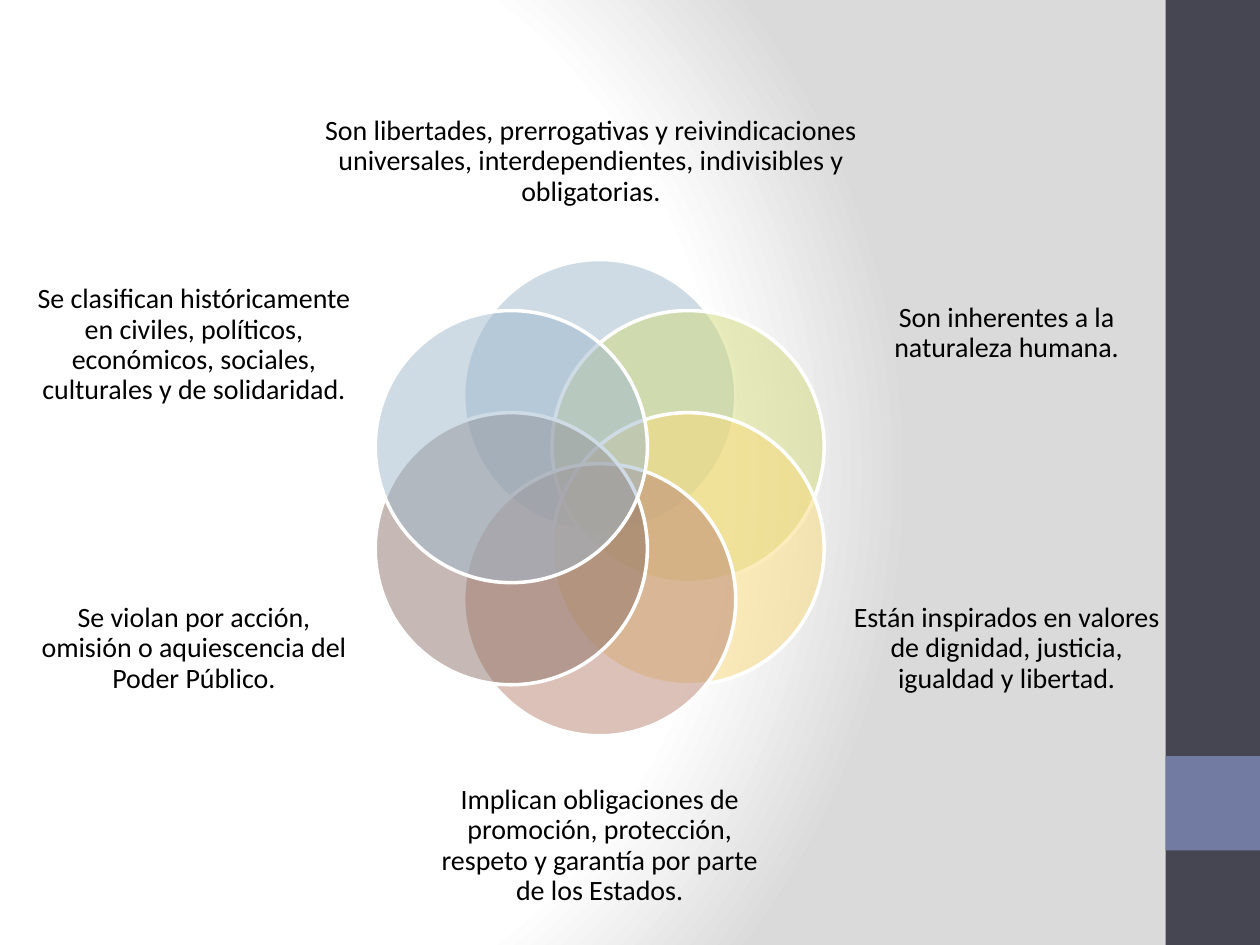
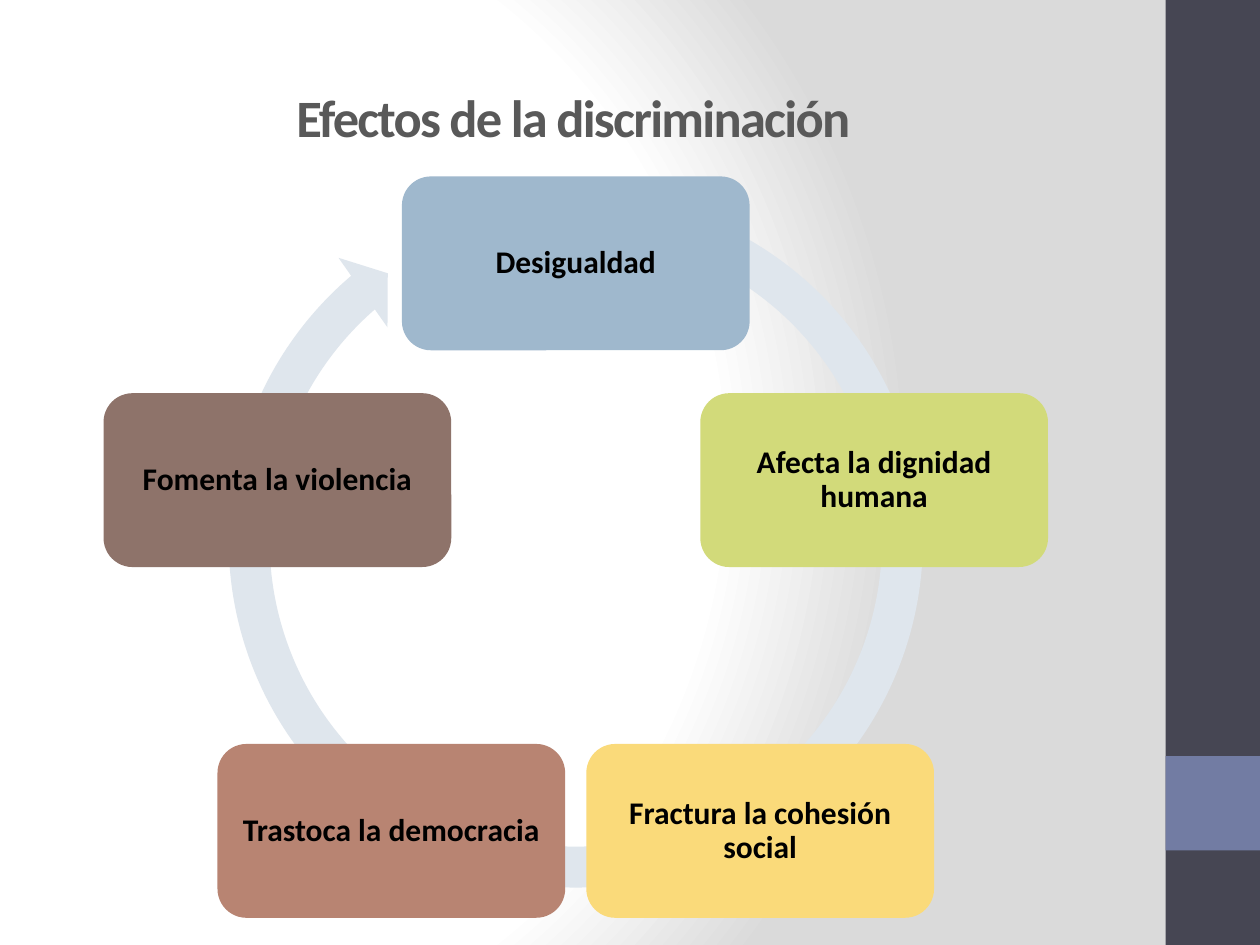
from dataclasses import dataclass
from math import cos, radians, sin

from lxml import etree
from pptx import Presentation
from pptx.dml.color import RGBColor
from pptx.enum.shapes import MSO_SHAPE
from pptx.enum.text import MSO_ANCHOR, PP_ALIGN
from pptx.oxml.ns import qn
from pptx.presentation import Presentation as Deck
from pptx.shapes.autoshape import Shape
from pptx.slide import Slide, SlideLayout
from pptx.util import Inches, Pt

RECTANGLE = MSO_SHAPE.RECTANGLE
ELLIPSE = MSO_SHAPE.OVAL
ROUNDED_RECTANGLE = MSO_SHAPE.ROUNDED_RECTANGLE
CIRCULAR_ARROW = MSO_SHAPE.CIRCULAR_ARROW
MIDDLE = MSO_ANCHOR.MIDDLE
CENTER = PP_ALIGN.CENTER


@dataclass(frozen=True)
class Theme:
    font: str = "Calibri"
    white: str = "FFFFFF"
    shade: str = "DADADA"
    band: str = "464653"
    band_accent: str = "727CA3"
    title: str = "595959"
    text: str = "000000"
    ring: str = "DFE6ED"
    blue: str = "9FB8CD"
    green: str = "D2DA7A"
    yellow: str = "FADA7A"
    clay: str = "B88472"
    brown: str = "8E736A"
    label_size: int = 16
    node_size: int = 18
    title_size: int = 30


THEME = Theme()


@dataclass(frozen=True)
class Box:
    left: float
    top: float
    width: float
    height: float

    def lengths(self) -> tuple[Inches, Inches, Inches, Inches]:
        return (Inches(self.left), Inches(self.top),
                Inches(self.width), Inches(self.height))


@dataclass(frozen=True)
class Orbit:
    center_x: float
    center_y: float
    radius: float
    count: int

    def box(self, index: int, width: float, height: float) -> Box:
        angle = radians(360 / self.count * index)
        x = self.center_x + self.radius * sin(angle)
        y = self.center_y - self.radius * cos(angle)
        return Box(x - width / 2, y - height / 2, width, height)


@dataclass(frozen=True)
class TextStyle:
    size: int
    color: str = THEME.text
    bold: bool = False
    line_spacing: float = 0.9
    inset: float = 0
    tracking: int = 0


@dataclass(frozen=True)
class Petal:
    color: str
    text: str
    label: Box


@dataclass(frozen=True)
class Effect:
    color: str
    text: str


LABEL_STYLE = TextStyle(THEME.label_size)
NODE_STYLE = TextStyle(THEME.node_size, bold=True, inset=0.07)
TITLE_STYLE = TextStyle(THEME.title_size, THEME.title, True, 1, 0.1, -100)

BANDS = (
    (Box(9.25, 0, 0.75, 7.5), THEME.band),
    (Box(9.25, 6, 0.75, 0.75), THEME.band_accent),
)

PETAL_SIZE = 2.16
PETAL_ORBIT = Orbit(4.76, 3.95, 0.81, 6)
PETALS = (
    Petal(THEME.blue,
          "Son libertades, prerrogativas y reivindicaciones universales, "
          "interdependientes, indivisibles y obligatorias.",
          Box(2.57, 0.55, 4.24, 1.47)),
    Petal(THEME.green, "Son inherentes a la naturaleza humana.",
          Box(6.71, 1.84, 2.56, 1.61)),
    Petal(THEME.yellow,
          "Están inspirados en valores de dignidad, justicia, "
          "igualdad y libertad.",
          Box(6.71, 4.25, 2.56, 1.8)),
    Petal(THEME.clay,
          "Implican obligaciones de promoción, protección, respeto y "
          "garantía por parte de los Estados.",
          Box(3.41, 5.98, 2.7, 1.47)),
    Petal(THEME.brown,
          "Se violan por acción, omisión o aquiescencia del Poder Público.",
          Box(0.26, 4.25, 2.56, 1.8)),
    Petal(THEME.blue,
          "Se clasifican históricamente en civiles, políticos, económicos, "
          "sociales, culturales y de solidaridad.",
          Box(0.26, 1.84, 2.56, 1.8)),
)

NODE_WIDTH, NODE_HEIGHT = 2.76, 1.38
NODE_ORBIT = Orbit(4.57, 4.58, 2.49, 5)
RING_BOX = Box(1.64, 1.36, 5.86, 5.86)
RING_PERCENTS = (5.54, 330.68, 13761.3, 17394.9, 5.76)
EFFECTS = (
    Effect(THEME.blue, "Desigualdad"),
    Effect(THEME.green, "Afecta la dignidad humana"),
    Effect(THEME.yellow, "Fractura la cohesión social"),
    Effect(THEME.clay, "Trastoca la democracia"),
    Effect(THEME.brown, "Fomenta la violencia"),
)


def set_background(layout: SlideLayout) -> None:
    layout.background.fill.gradient()
    gradient = layout.element.find(".//" + qn("a:gradFill"))
    for child in list(gradient):
        gradient.remove(child)
    stops = etree.SubElement(gradient, qn("a:gsLst"))
    for percent, color in ((0, THEME.white), (75, THEME.white),
                           (100, THEME.shade)):
        stop = etree.SubElement(stops, qn("a:gs"), pos=str(percent * 1000))
        etree.SubElement(stop, qn("a:srgbClr"), val=color)
    circle = etree.SubElement(gradient, qn("a:path"))
    circle.set("path", "circle")
    etree.SubElement(circle, qn("a:fillToRect"),
                     l="20000", t="50000", r="100000", b="50000")


def add_filled(slide: Slide, kind: MSO_SHAPE, box: Box, color: str) -> Shape:
    shape = slide.shapes.add_shape(kind, *box.lengths())
    shape.shadow.inherit = False
    shape.fill.solid()
    shape.fill.fore_color.rgb = RGBColor.from_string(color)
    shape.line.fill.background()
    return shape


def write_text(shape: Shape, text: str, style: TextStyle) -> None:
    frame = shape.text_frame
    frame.word_wrap = True
    frame.vertical_anchor = MIDDLE
    frame.margin_left = frame.margin_right = Inches(style.inset)
    frame.margin_top = frame.margin_bottom = Inches(min(style.inset, 0.07))
    paragraph = frame.paragraphs[0]
    paragraph.alignment = CENTER
    paragraph.line_spacing = style.line_spacing
    run = paragraph.add_run()
    run.text = text
    run.font.name = THEME.font
    run.font.size = Pt(style.size)
    run.font.bold = style.bold
    run.font.color.rgb = RGBColor.from_string(style.color)
    if style.tracking:
        run.font._element.set("spc", str(style.tracking))


def add_text(slide: Slide, box: Box, text: str, style: TextStyle) -> None:
    write_text(slide.shapes.add_textbox(*box.lengths()), text, style)


def add_petal(slide: Slide, index: int, petal: Petal) -> None:
    box = PETAL_ORBIT.box(index, PETAL_SIZE, PETAL_SIZE)
    shape = add_filled(slide, ELLIPSE, box, petal.color)
    fill_color = shape.fill._xPr.find(qn("a:solidFill")).find(qn("a:srgbClr"))
    etree.SubElement(fill_color, qn("a:alpha"), val="50000")
    shape.line.color.rgb = RGBColor.from_string(THEME.white)
    shape.line.width = Pt(2)
    add_text(slide, petal.label, petal.text, LABEL_STYLE)


def add_ring(slide: Slide) -> None:
    ring = add_filled(slide, CIRCULAR_ARROW, RING_BOX, THEME.ring)
    for index, percent in enumerate(RING_PERCENTS):
        ring.adjustments[index] = percent / 100


def add_effect(slide: Slide, index: int, effect: Effect) -> None:
    box = NODE_ORBIT.box(index, NODE_WIDTH, NODE_HEIGHT)
    node = add_filled(slide, ROUNDED_RECTANGLE, box, effect.color)
    write_text(node, effect.text, NODE_STYLE)


def add_banded_slide(presentation: Deck, layout: SlideLayout) -> Slide:
    slide = presentation.slides.add_slide(layout)
    for box, color in BANDS:
        add_filled(slide, RECTANGLE, box, color)
    return slide


def main() -> None:
    presentation = Presentation()
    presentation.slide_width = Inches(10)
    presentation.slide_height = Inches(7.5)
    blank_layout = presentation.slide_layouts[6]
    set_background(blank_layout)

    rights_slide = add_banded_slide(presentation, blank_layout)
    for index, petal in enumerate(PETALS):
        add_petal(rights_slide, index, petal)

    effects_slide = add_banded_slide(presentation, blank_layout)
    add_text(effects_slide, Box(0.76, 0.62, 7.58, 0.61),
             "Efectos de la discriminación", TITLE_STYLE)
    add_ring(effects_slide)
    for index, effect in enumerate(EFFECTS):
        add_effect(effects_slide, index, effect)

    presentation.save("out.pptx")


if __name__ == "__main__":
    main()
